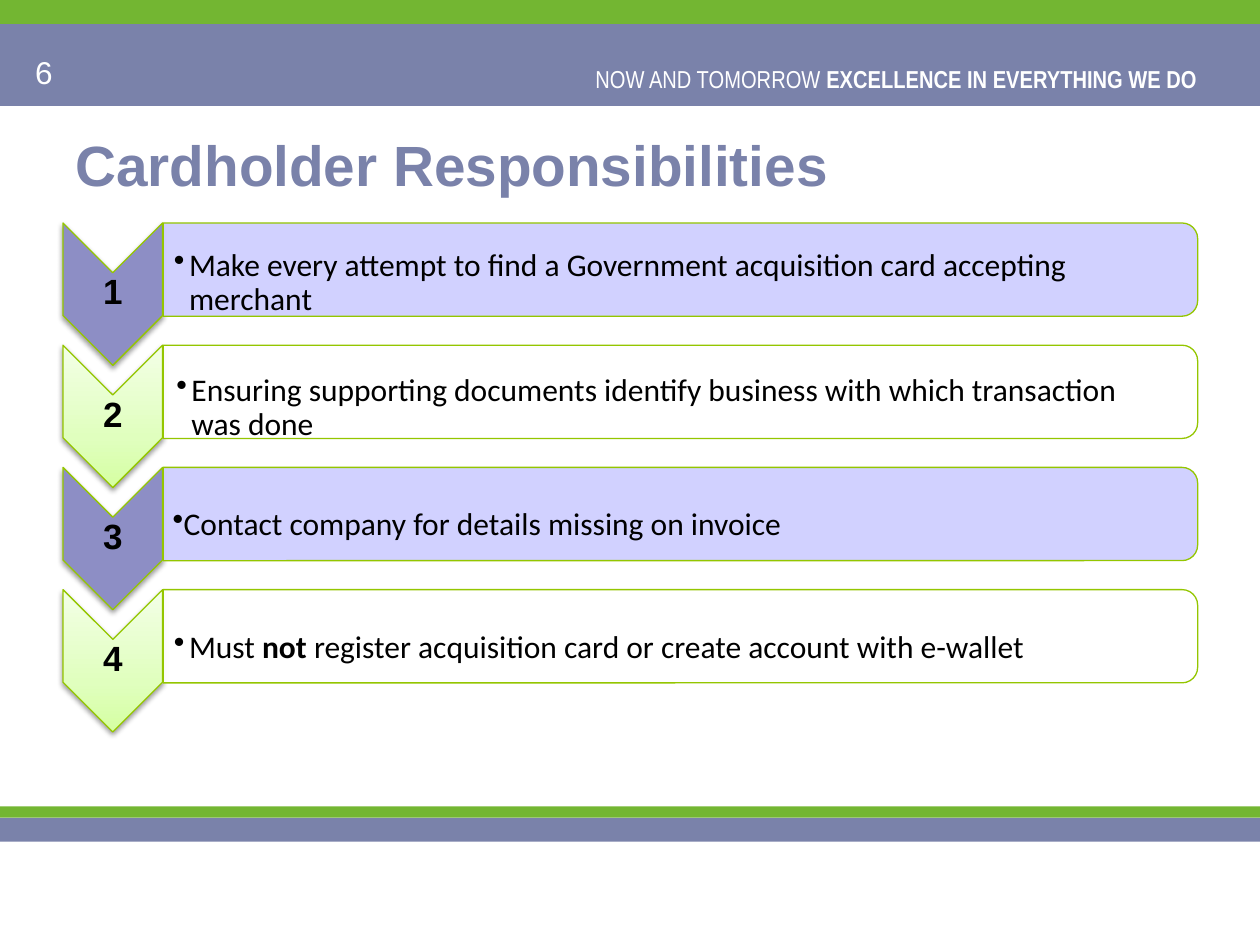
from pptx import Presentation
from pptx.dml.color import RGBColor
from pptx.enum.shapes import MSO_SHAPE as Shape
from pptx.enum.text import MSO_ANCHOR as Anchor, PP_ALIGN as Align
from pptx.oxml import parse_xml
from pptx.oxml.ns import nsdecls, qn
from pptx.util import Inches, Pt

SLATE = RGBColor(0x7A, 0x82, 0xAA)
GREEN = RGBColor(0x73, 0xB6, 0x32)
LIME = RGBColor(0x94, 0xC6, 0x00)
VIOLET = RGBColor(0x8D, 0x8E, 0xC5)
LAVENDER = RGBColor(0xCD, 0xCD, 0xFF)
WHITE = RGBColor(0xFF, 0xFF, 0xFF)
BLACK = RGBColor(0x00, 0x00, 0x00)
LIME_FADE = ((0, "D5FFA2"), (35, "E0FFBE"), (100, "F3FFE6"))


def write(box, runs, font="Arial", size=18, color=BLACK, bold=False,
          align=Align.LEFT, anchor=Anchor.TOP, insets=(0.1, 0.05, 0.1, 0.05),
          spacing=None, bullet_indent=None):
    frame = box.text_frame
    frame.word_wrap = True
    frame.vertical_anchor = anchor
    (frame.margin_left, frame.margin_top,
     frame.margin_right, frame.margin_bottom) = map(Inches, insets)
    paragraph = frame.paragraphs[0]
    paragraph.alignment = align
    paragraph.line_spacing = spacing
    if bullet_indent:
        properties = paragraph._p.get_or_add_pPr()
        properties.set("marL", str(Inches(bullet_indent)))
        properties.set("indent", str(-Inches(bullet_indent)))
        properties.append(parse_xml(f'<a:buChar {nsdecls("a")} char="•"/>'))
    for text, strong in runs:
        run = paragraph.add_run()
        run.text = text
        run.font.name = font
        run.font.size = Pt(size)
        run.font.bold = bold or strong
        run.font.color.rgb = color


class ResponsibilitySlide:
    def __init__(self, slide):
        self.shapes = slide.shapes

    def text(self, left, top, width, height, runs, **style):
        box = self.shapes.add_textbox(*map(Inches, (left, top, width, height)))
        write(box, runs, **style)

    def shape(self, kind, left, top, width, height, fill):
        shape = self.shapes.add_shape(kind, *map(Inches, (left, top, width, height)))
        shape.shadow.inherit = False
        shape.fill.solid()
        shape.fill.fore_color.rgb = fill
        shape.line.fill.background()
        return shape

    def band(self, top, height, fill):
        self.shape(Shape.RECTANGLE, 0, top, 10, height, fill)

    def turned(self, kind, center_x, center_y, length, depth, fill):
        shape = self.shape(kind, center_x - length / 2, center_y - depth / 2,
                           length, depth, fill)
        shape.rotation = 90
        shape.line.color.rgb = LIME
        shape.line.width = Pt(0.75)
        return shape

    def chevron(self, center_y, fill, fade=None):
        chevron = self.turned(Shape.CHEVRON, 0.895, center_y, 1.13, 0.79, fill)
        properties = chevron._element.spPr
        if fade:
            stops = "".join(
                f'<a:gs pos="{position * 1000}"><a:srgbClr val="{color}"/></a:gs>'
                for position, color in fade)
            properties.replace(properties.find(qn("a:solidFill")), parse_xml(
                f'<a:gradFill {nsdecls("a")} rotWithShape="0"><a:gsLst>{stops}</a:gsLst>'
                '<a:lin ang="16200000" scaled="0"/></a:gradFill>'))
        properties.find(qn("a:effectLst")).append(parse_xml(
            f'<a:outerShdw {nsdecls("a")} blurRad="{Pt(3.1)}" dist="{Pt(1.6)}" '
            'dir="5400000" rotWithShape="0"><a:srgbClr val="000000">'
            '<a:alpha val="38000"/></a:srgbClr></a:outerShdw>'))

    def panel(self, center_y, fill):
        panel = self.turned(Shape.ROUND_2_SAME_RECTANGLE, 5.4, center_y, 8.21, 0.74, fill)
        panel.rotation = 90
        panel.left, panel.top = Inches(5.03), Inches(center_y - 8.21 / 2)
        panel.width, panel.height = Inches(0.74), Inches(8.21)
        panel.rotation = 90
        panel.left, panel.width = Inches(5.03), Inches(0.74)
        color = panel._element.spPr.find(qn("a:solidFill"))[0]
        color.append(parse_xml(f'<a:alpha {nsdecls("a")} val="90000"/>'))

    def duty(self, number, runs, left_inset, top_inset, indent):
        offset = (number - 1) * 0.97
        odd = number % 2 == 1
        self.chevron(2.335 + offset, VIOLET if odd else WHITE, None if odd else LIME_FADE)
        self.text(0.5, 2.16 + offset, 0.79, 0.34, [(str(number), True)], size=20,
                  align=Align.CENTER, anchor=Anchor.MIDDLE, insets=(0.01,) * 4, spacing=0.9)
        self.panel(2.14 + offset, LAVENDER if odd else WHITE)
        self.text(1.29, 1.81 + offset, 8.17, 0.66, runs, font="Calibri", spacing=0.9,
                  insets=(left_inset, top_inset, 0.3, 0.01), bullet_indent=indent)


def main():
    deck = Presentation()
    deck.slide_width, deck.slide_height = Inches(10), Inches(7.5)
    page = ResponsibilitySlide(deck.slides.add_slide(deck.slide_layouts[6]))

    for top, height, fill in ((0.19, 0.65, SLATE), (0, 0.19, GREEN),
                              (6.49, 0.19, SLATE), (6.4, 0.09, GREEN)):
        page.band(top, height, fill)
    page.text(4.4, 0.46, 5.2, 0.34,
              [("NOW AND TOMORROW ", False), ("EXCELLENCE IN EVERYTHING WE DO", True)],
              font="Arial Narrow", size=14, color=WHITE, align=Align.RIGHT)
    page.text(0.18, 0.37, 2.33, 0.4, [("6", False)], color=WHITE)
    page.text(0.5, 0.99, 9, 0.62, [("Cardholder Responsibilities", True)],
              size=32.4, color=SLATE, anchor=Anchor.MIDDLE)

    duties = (
        ([("Make every attempt to find a Government acquisition card accepting merchant",
           False)], 0.09, 0.17, 0.12),
        ([("Ensuring supporting documents identify business with which transaction was done",
           False)], 0.11, 0.19, 0.12),
        ([("Contact company for details missing on invoice", False)], 0.08, 0.3, 0.06),
        ([("Must ", False), ("not ", True),
          ("register acquisition card or create account with e-wallet", False)],
         0.09, 0.32, 0.12),
    )
    for number, duty in enumerate(duties, 1):
        page.duty(number, *duty)

    deck.save("out.pptx")


if __name__ == "__main__":
    main()
